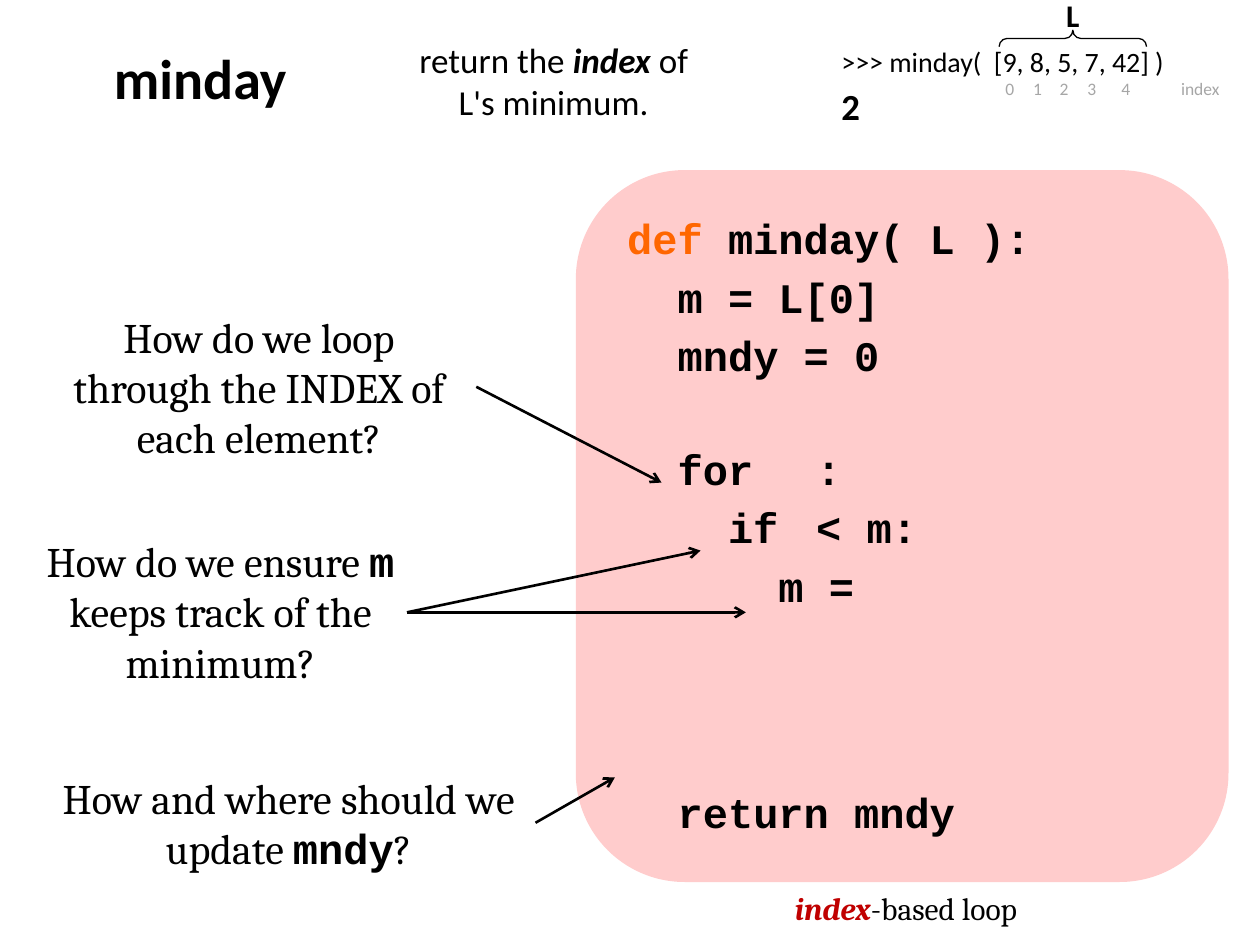
from pptx import Presentation
from pptx.dml.color import RGBColor
from pptx.enum.shapes import MSO_CONNECTOR as Connector, MSO_SHAPE as Shape
from pptx.enum.text import MSO_AUTO_SIZE as AutoSize, PP_ALIGN as Align
from pptx.oxml.ns import qn
from pptx.util import Inches, Pt
from lxml.etree import SubElement

BLACK = RGBColor(0x00, 0x00, 0x00)
PINK = RGBColor(0xFF, 0xCC, 0xCC)
ORANGE = RGBColor(0xFF, 0x66, 0x00)
RED = RGBColor(0xC0, 0x00, 0x00)
GRAY = RGBColor(0xA6, 0xA6, 0xA6)
SANS, SERIF, MONO = "Calibri", "Cambria", "Courier New"
COLUMNS, ROWS = 100, 75
CHARACTER = 14.4
CODE_GAP, CODE_PITCH = 13.1, 32.1
CODE_LINES = [
    (0, 0, [("def ", {"color": ORANGE}), "minday( L ):"], None),
    (2, 0, ["m = L[0]"], None),
    (2, 0, ["mndy = 0"], None),
    (2, 1, ["for\t:"], 22),
    (4, 0, ["if\t< m:"], 13),
    (6, 0, ["m ="], None),
    (2, 3, ["return mndy"], None),
]
INDEX_COLUMNS = (78.8, 81, 83.1, 85.3, 88)
ARROWS = [
    ((37.8, 30.7), (52.5, 38.3)),
    ((32.3, 48.6), (59.2, 48.6)),
    ((32.3, 48.6), (55.6, 43.7)),
    ((42.5, 65.3), (48.8, 61.7)),
]


def grid(*cells):
    """Turn columns and rows of the grid into lengths."""
    return [Inches(cell / 10) for cell in cells]


def add_runs(paragraph, parts, font, size, bold=False, color=BLACK):
    """Write strings or (string, changes) pairs as formatted runs."""
    for part in parts:
        text, changes = (part, {}) if isinstance(part, str) else part
        run = paragraph.add_run()
        run.text = text
        run.font.name = changes.get("font", font)
        run.font.size = Pt(size)
        run.font.bold = changes.get("bold", bold)
        run.font.italic = changes.get("italic", False)
        run.font.color.rgb = changes.get("color", color)


def add_frame(slide, box, wrap=True):
    """Add an empty text box and return its text frame."""
    frame = slide.shapes.add_textbox(*grid(*box)).text_frame
    frame.word_wrap = wrap
    frame.auto_size = AutoSize.SHAPE_TO_FIT_TEXT
    return frame


def add_label(slide, box, parts, font, size, wrap=True, **style):
    """Add a centred text box of one paragraph."""
    paragraph = add_frame(slide, box, wrap).paragraphs[0]
    paragraph.alignment = Align.CENTER
    add_runs(paragraph, parts, font, size, **style)


def next_paragraph(frame, number, gap):
    """Return a tightly spaced paragraph with a gap above it."""
    paragraph = frame.add_paragraph() if number else frame.paragraphs[0]
    paragraph.line_spacing = 0.7
    paragraph.space_before = Pt(gap)
    return paragraph


def add_code(slide, box):
    """Add the program, indented and aligned by character width."""
    frame = add_frame(slide, box)
    for number, (indent, skipped, parts, stop) in enumerate(CODE_LINES):
        paragraph = next_paragraph(frame, number, CODE_GAP + skipped * CODE_PITCH)
        properties = paragraph._p.get_or_add_pPr()
        properties.set("marL", "0")
        properties.set("indent", str(Pt(indent * CHARACTER)))
        if stop:
            stops = SubElement(properties, qn("a:tabLst"))
            SubElement(stops, qn("a:tab"), pos=str(Pt(stop * CHARACTER)), algn="l")
        add_runs(paragraph, parts, MONO, 24, bold=True)


def add_example(slide):
    """Add the sample call with its result, brace and index numbers."""
    frame = add_frame(slide, (65.8, 3.8, 29.4, 7.1))
    call = next_paragraph(frame, 0, 8)
    add_runs(call, [">>> minday(  [9, 8, 5, 7, 42] )"], SANS, 16)
    result = next_paragraph(frame, 1, 10.5)
    add_runs(result, ["2"], SANS, 21, bold=True)
    for number, column in enumerate(INDEX_COLUMNS):
        add_label(slide, (column, 5.7, 2.7, 2.7), [str(number)], SANS, 10,
                  wrap=False, color=GRAY)
    add_label(slide, (92.7, 5.7, 5.1, 2.7), ["index"], SANS, 10,
              wrap=False, color=GRAY)
    add_label(slide, (83.6, -0.8, 3.1, 4), ["L"], SANS, 18, wrap=False, bold=True)
    brace = slide.shapes.add_shape(Shape.RIGHT_BRACE, *grid(84.5, -2.8, 1.3, 11.7))
    brace.rotation = 270
    brace.adjustments[0] = 0.484
    brace.shadow.inherit = False
    brace.fill.background()
    brace.line.color.rgb = BLACK
    brace.line.width = Pt(0.75)


def add_panel(slide, box):
    """Add the rounded panel behind the program."""
    panel = slide.shapes.add_shape(Shape.ROUNDED_RECTANGLE, *grid(*box))
    panel.shadow.inherit = False
    panel.fill.solid()
    panel.fill.fore_color.rgb = PINK
    panel.line.fill.background()


def add_arrow(slide, start, end):
    """Add a straight arrow between two grid points."""
    arrow = slide.shapes.add_connector(Connector.STRAIGHT, *grid(*start, *end))
    arrow.line.color.rgb = BLACK
    arrow.line.width = Pt(1.5)
    SubElement(arrow.line._get_or_add_ln(), qn("a:tailEnd"), type="arrow")
    SubElement(arrow._element.spPr, qn("a:effectLst"))


def main():
    """Build the slide and save it."""
    presentation = Presentation()
    presentation.slide_width, presentation.slide_height = grid(COLUMNS, ROWS)
    slide = presentation.slides.add_slide(presentation.slide_layouts[6])
    code_word = {"font": MONO, "bold": True}
    strong = {"bold": True, "italic": True}

    add_panel(slide, (45.7, 13.5, 51.8, 56.5))
    add_code(slide, (48.8, 17.5, 48.6, 52.3))
    add_label(slide, (58, 70.1, 27.8, 4),
              [("index", {**strong, "color": RED}), "-based loop"], SERIF, 18)
    add_label(slide, (8, 3, 15.8, 6.4), ["minday"], SANS, 32, wrap=False, bold=True)
    add_label(slide, (32.3, 2.6, 23.3, 7.7),
              ["return the ", ("index", strong), " of L's minimum."], SANS, 20)
    add_example(slide)
    add_label(slide, (3.3, 24.2, 34.5, 13.1),
              ["How do we loop through the INDEX of each element?"], SERIF, 24)
    add_label(slide, (2.7, 42, 29.6, 13.1),
              ["How do we ensure ", ("m", code_word), " keeps track of the minimum?"],
              SERIF, 24)
    add_label(slide, (3.3, 60.8, 39.2, 9.1),
              ["How and where should we update ", ("mndy", code_word), "?"], SERIF, 24)
    for start, end in ARROWS:
        add_arrow(slide, start, end)
    presentation.save("out.pptx")


if __name__ == "__main__":
    main()
